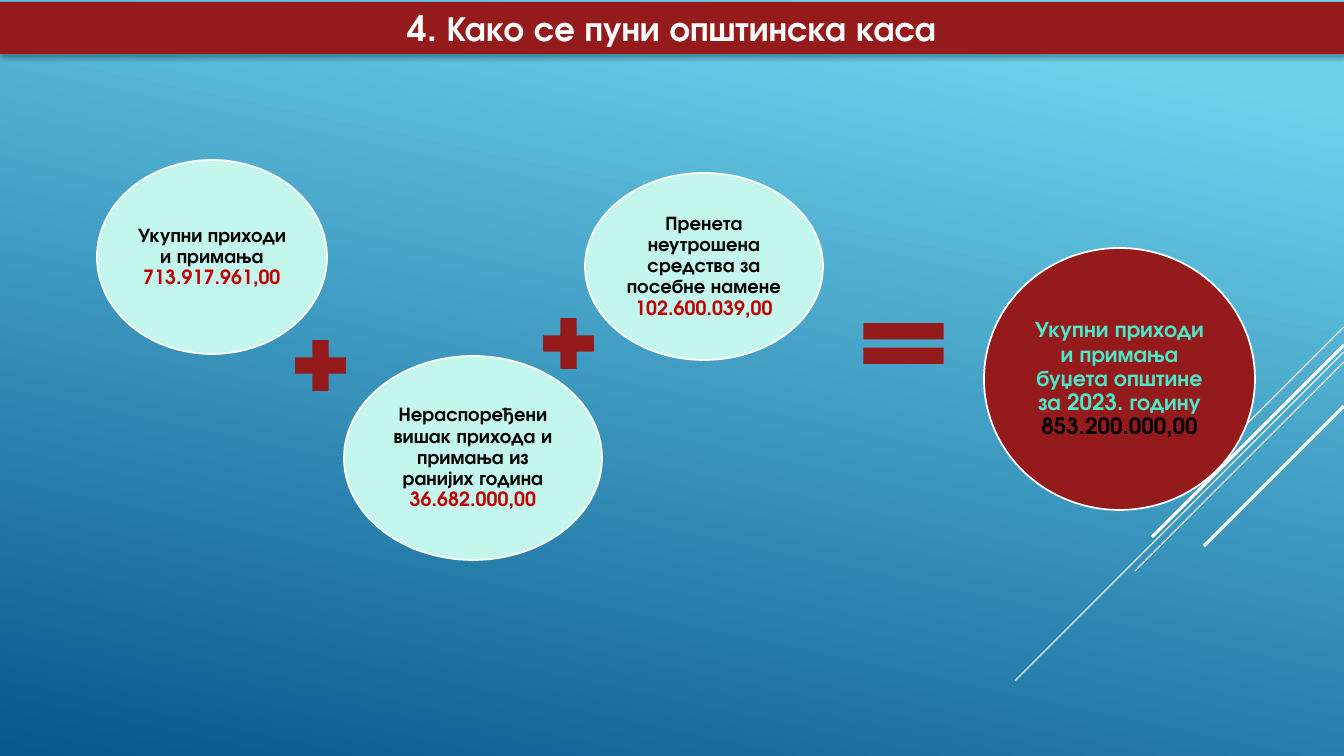
import lxml.etree
import pptx
import pptx.dml.color
import pptx.enum.shapes
import pptx.enum.text
import pptx.oxml
import pptx.oxml.ns
import pptx.util

SCALE = 12192000 / 1344
FONT = "TeX Gyre Adventor"
COLORS = {
    "sky": "6ED2EB",
    "deep": "06588E",
    "white": "FFFFFF",
    "black": "000000",
    "maroon": "941A1B",
    "mint": "C3F7ED",
    "red": "C00000",
    "turquoise": "4BE7C8",
}
SHAPES = pptx.enum.shapes.MSO_SHAPE


def px(*lengths):
    return [pptx.util.Emu(round(length * SCALE)) for length in lengths]


def color(name):
    return pptx.dml.color.RGBColor.from_string(COLORS[name])


deck = pptx.Presentation()
deck.slide_width, deck.slide_height = px(1344, 756)
page = deck.slides.add_slide(deck.slide_layouts[5])

backdrop = page.background.fill
backdrop.gradient()
backdrop.gradient_angle = 258
for stop, name, position in zip(backdrop.gradient_stops, ("sky", "deep"), (0.1, 1)):
    stop.color.rgb = color(name)
    stop.position = position

for top, reach, weight in (
    (327, 101, 0.75),
    (352, 329, 0.75),
    (362, 209, 0.75),
    (345, 192, 2.25),
    (406, 140, 2.25),
):
    ray = page.shapes.add_connector(
        pptx.enum.shapes.MSO_CONNECTOR.STRAIGHT, *px(1344, top, 1344 - reach, top + reach)
    )
    ray.line.color.rgb = color("white")
    ray.line.width = pptx.util.Pt(weight)
    lxml.etree.SubElement(ray._element.spPr, pptx.oxml.ns.qn("a:effectLst"))

title = page.shapes.title
title.left, title.top, title.width, title.height = px(0, 2, 1344, 52)
geometry = lxml.etree.SubElement(title._element.spPr, pptx.oxml.ns.qn("a:prstGeom"), prst="roundRect")
lxml.etree.SubElement(geometry, pptx.oxml.ns.qn("a:avLst"))
title.fill.solid()
title.fill.fore_color.rgb = color("maroon")
title.line.fill.background()
title._element.spPr.append(pptx.oxml.parse_xml(
    f'<a:effectLst {pptx.oxml.ns.nsdecls("a")}>'
    '<a:outerShdw blurRad="44450" dist="27940" dir="5400000" algn="ctr" rotWithShape="0">'
    f'<a:srgbClr val="{COLORS["black"]}"><a:alpha val="32000"/></a:srgbClr>'
    '</a:outerShdw></a:effectLst>'
))
title.text_frame.text = "4. Како се пуни општинска каса"
title.text_frame.auto_size = pptx.enum.text.MSO_AUTO_SIZE.NONE
title.text_frame.vertical_anchor = pptx.enum.text.MSO_ANCHOR.MIDDLE
para = title.text_frame.paragraphs[0]
para.alignment = pptx.enum.text.PP_ALIGN.CENTER
para.font.name = FONT
para.font.size = pptx.util.Pt(25)
para.font.bold = True
para.font.color.rgb = color("white")

for place, fill, size, label, label_color, amount, amount_color in (
    ((97, 160, 230, 194), "mint", 14,
     "Укупни приходи и примања ", "black", "713.917.961,00", "red"),
    ((344, 356, 258, 204), "mint", 14,
     "Нераспоређени вишак прихода и примања из ранијих година ", "black", "36.682.000,00", "red"),
    ((585, 173, 238, 187), "mint", 14,
     "Пренета неутрошена средства за посебне намене ", "black", "102.600.039,00", "red"),
    ((984, 248, 271, 262), "maroon", 16,
     "Укупни приходи и примања буџета општине за 2023. годину ", "turquoise", "853.200.000,00", "black"),
):
    bubble = page.shapes.add_shape(SHAPES.OVAL, *px(*place))
    bubble.shadow.inherit = False
    bubble.fill.solid()
    bubble.fill.fore_color.rgb = color(fill)
    bubble.line.color.rgb = color("white")
    bubble.line.width = pptx.util.Pt(1.25)
    frame = bubble.text_frame
    frame.word_wrap = True
    frame.vertical_anchor = pptx.enum.text.MSO_ANCHOR.MIDDLE
    frame.margin_left, frame.margin_top, frame.margin_right, frame.margin_bottom = px(2, 2, 2, 2)
    para = frame.paragraphs[0]
    para.alignment = pptx.enum.text.PP_ALIGN.CENTER
    para.line_spacing = 0.9
    para.font.name = FONT
    para.font.size = pptx.util.Pt(size)
    para.font.bold = True
    for wording, name in ((label, label_color), (amount, amount_color)):
        span = para.add_run()
        span.text = wording
        span.font.color.rgb = color(name)

for kind, place in (
    (SHAPES.MATH_PLUS, (286, 331, 69, 69)),
    (SHAPES.MATH_PLUS, (534, 309, 69, 69)),
    (SHAPES.MATH_EQUAL, (849, 309, 109, 69)),
):
    sign = page.shapes.add_shape(kind, *px(*place))
    sign.shadow.inherit = False
    sign.fill.solid()
    sign.fill.fore_color.rgb = color("maroon")
    sign.line.fill.background()

deck.save("out.pptx")
